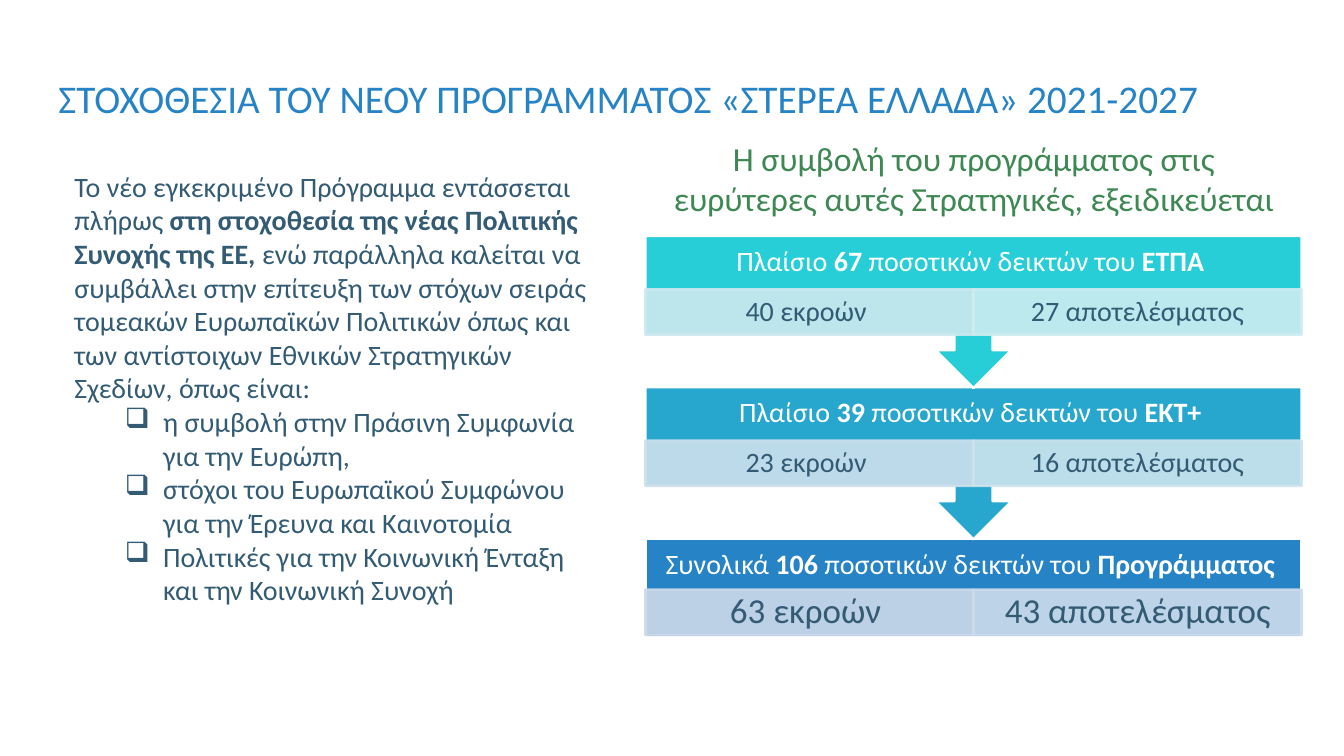
from lxml import etree
from pptx import Presentation
from pptx.dml.color import RGBColor
from pptx.enum import shapes, text
from pptx.oxml import ns
from pptx.util import Inches, Pt

TITLE = "ΣΤΟΧΟΘΕΣΙΑ ΤΟΥ ΝΕΟΥ ΠΡΟΓΡΑΜΜΑΤΟΣ «ΣΤΕΡΕΑ ΕΛΛΑΔΑ» 2021-2027"
LEAD = "Η συμβολή του προγράμματος στις ευρύτερες αυτές Στρατηγικές, εξειδικεύεται"
INTRO = [
    ("Το νέο εγκεκριμένο Πρόγραμμα εντάσσεται πλήρως ", False),
    ("στη στοχοθεσία της νέας Πολιτικής Συνοχής της ΕΕ, ", True),
    ("ενώ παράλληλα καλείται να συμβάλλει στην επίτευξη των στόχων σειράς "
     "τομεακών Ευρωπαϊκών Πολιτικών όπως και των αντίστοιχων Εθνικών "
     "Στρατηγικών Σχεδίων, όπως είναι:", False),
]
GOALS = [
    "η συμβολή στην Πράσινη Συμφωνία για την Ευρώπη,",
    "στόχοι του Ευρωπαϊκού Συμφώνου για την Έρευνα και Καινοτομία",
    "Πολιτικές για την Κοινωνική Ένταξη και την Κοινωνική Συνοχή",
]
STEPS = [
    {"head": ("Πλαίσιο ", "67", "ΕΤΠΑ "), "fill": "27CED7",
     "cells": [("40 εκροών ", "CDE8EF"), ("27 αποτελέσματος", "CDEDF0")]},
    {"head": ("Πλαίσιο ", "39", "ΕΚΤ+ "), "fill": "27A7CE",
     "cells": [("23 εκροών ", "CDE0ED"), ("16 αποτελέσματος", "CDE4EE")]},
    {"head": ("Συνολικά ", "106", "Προγράμματος "), "fill": "2683C6",
     "cells": [("63 εκροών ", "CDD9EA"), ("43 αποτελέσματος", "CDDCEC")]},
]
UNIT = " ποσοτικών δεικτών του "
THEME = {
    "font": "Calibri", "title": "2683C6", "lead": "3E8853", "body": "335B74",
    "white": "FFFFFF", "big": 28, "mid": 24, "total": 25, "base": 20, "line": 1.75,
}
LEFT, TOP, WIDE, PITCH = 6.4, 2.34, 6.51, 1.5
HEAD, CELL, CALL, LAST = 0.53, 0.45, 1.51, 0.98

deck = Presentation()
deck.slide_width, deck.slide_height = Inches(13.33), Inches(7.5)
slide = deck.slides.add_slide(deck.slide_layouts[5])


def style(para, size, color, align=text.PP_ALIGN.LEFT):
    para.alignment = align
    para.font.name = THEME["font"]
    para.font.size = Pt(size)
    para.font.color.rgb = RGBColor.from_string(color)


def write(para, runs):
    for words, bold in runs:
        run = para.add_run()
        run.text = words
        if bold:
            run.font.bold = True


def label(x, y, w, h):
    box = slide.shapes.add_textbox(*map(Inches, (x, y, w, h)))
    box.text_frame.word_wrap = True
    return box.text_frame


def center(frame, runs, size, color, side, edge):
    frame.word_wrap = True
    frame.vertical_anchor = text.MSO_ANCHOR.MIDDLE
    frame.margin_left = frame.margin_right = Inches(side)
    frame.margin_top = frame.margin_bottom = Inches(edge)
    para = frame.paragraphs[0]
    para.line_spacing = 0.9
    write(para, runs)
    style(para, size, color, text.PP_ALIGN.CENTER)


def block(kind, x, y, w, h, fill, line, alpha=None):
    shape = slide.shapes.add_shape(kind, *map(Inches, (x, y, w, h)))
    shape.shadow.inherit = False
    shape.fill.solid()
    shape.fill.fore_color.rgb = RGBColor.from_string(fill)
    shape.line.color.rgb = RGBColor.from_string(line)
    shape.line.width = Pt(THEME["line"])
    if alpha:
        for tone in shape._element.spPr.iter(ns.qn("a:srgbClr")):
            etree.SubElement(tone, ns.qn("a:alpha"), val=str(alpha * 1000))
    return shape


def bullet(para):
    para.level = 1
    props = para._p.get_or_add_pPr()
    props.set("marL", str(Inches(0.88)))
    props.set("indent", str(Inches(-0.38)))
    etree.SubElement(props, ns.qn("a:buChar"), char="❑")


def step(rank, item):
    last = rank == len(STEPS) - 1
    y = TOP + rank * PITCH
    if last:
        block(shapes.MSO_SHAPE.RECTANGLE, LEFT, y, WIDE, LAST, item["fill"], THEME["white"])
    else:
        call = block(shapes.MSO_SHAPE.UP_ARROW_CALLOUT, LEFT, y, WIDE, CALL,
                     item["fill"], THEME["white"])
        call.rotation = 180
    start, count, fund = item["head"]
    runs = [(start, False), (count, True), (UNIT, False), (fund, True)]
    center(label(LEFT, y, WIDE, HEAD), runs, THEME["base"], THEME["white"], 0.16, 0.16)
    size, side, drop = (THEME["total"], 0.19, 0.51) if last else (THEME["base"], 0.16, HEAD)
    half = WIDE / 2
    for col, (words, tint) in enumerate(item["cells"]):
        cell = block(shapes.MSO_SHAPE.RECTANGLE, LEFT + col * half, y + drop, half, CELL,
                     tint, tint, 90)
        center(cell.text_frame, [(words, False)], size, THEME["body"], side, 0.03)


title = slide.shapes.title
title.left, title.top, title.width, title.height = map(Inches, (0.48, 0.69, 11.98, 0.57))
title.text_frame.text = TITLE
title.text_frame.auto_size = text.MSO_AUTO_SIZE.NONE
title.text_frame.vertical_anchor = text.MSO_ANCHOR.TOP
style(title.text_frame.paragraphs[0], THEME["big"], THEME["title"])

body = label(0.64, 1.63, 5.38, 4.48)
write(body.paragraphs[0], INTRO)
style(body.paragraphs[0], THEME["base"], THEME["body"])
for goal in GOALS:
    para = body.add_paragraph()
    bullet(para)
    write(para, [(goal, False)])
    style(para, THEME["base"], THEME["body"])

for rank, item in reversed(list(enumerate(STEPS))):
    step(rank, item)

lead = label(6.56, 1.32, 6.2, 0.91)
write(lead.paragraphs[0], [(LEAD, False)])
style(lead.paragraphs[0], THEME["mid"], THEME["lead"], text.PP_ALIGN.CENTER)

deck.save("out.pptx")
